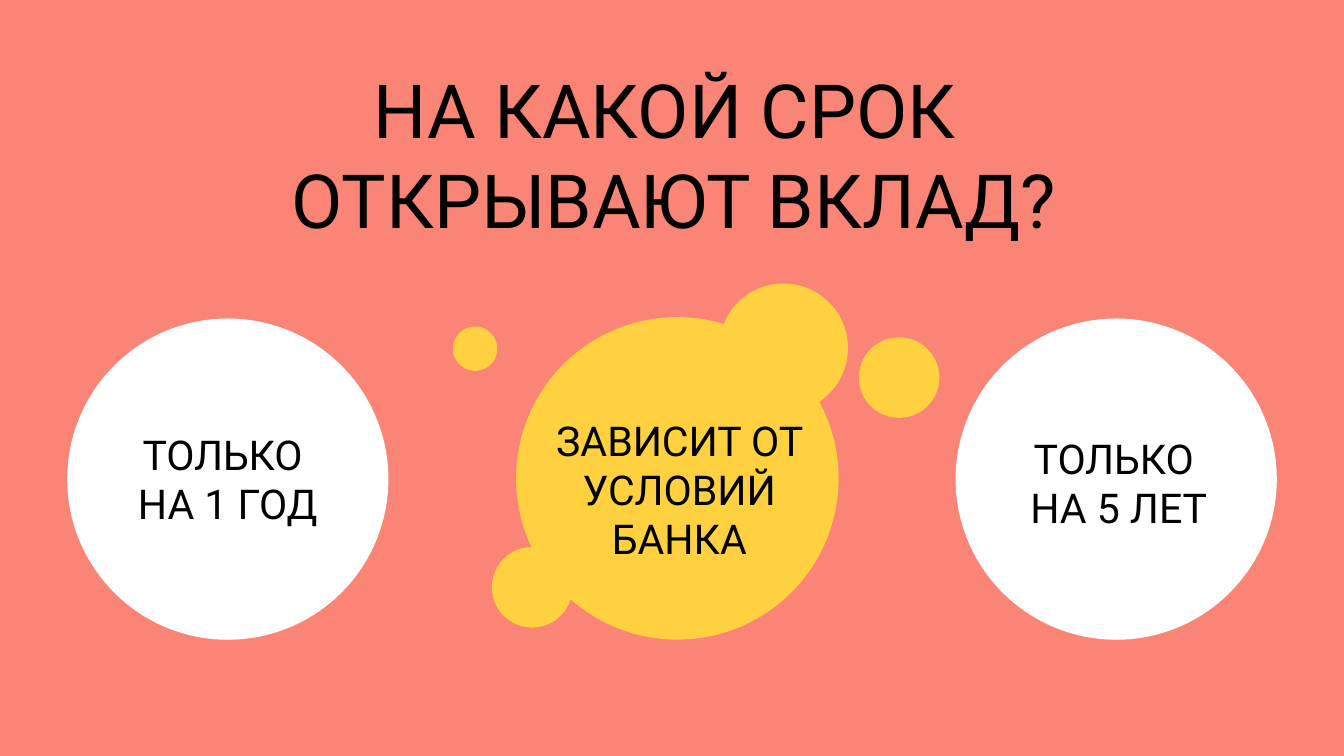
from pptx import Presentation
from pptx.dml.color import RGBColor
from pptx.enum.shapes import MSO_SHAPE as Shape
from pptx.enum.text import MSO_ANCHOR as Anchor, PP_ALIGN as Align
from pptx.util import Inches, Pt

COLORS = {"coral": "FA8475", "white": "FFFFFF", "yellow": "FFD040", "black": "000000"}
COLUMNS, ROWS = 100, 56.25


class Slide:
    font = "Roboto"

    def __init__(self, deck):
        self.unit = deck.slide_width / COLUMNS
        self.page = deck.slides.add_slide(deck.slide_layouts[6])

    def place(self, *cells):
        return [round(cell * self.unit) for cell in cells]

    def shape(self, kind, color, left, top, width, height, parent=None):
        holder = parent or self.page
        shape = holder.shapes.add_shape(kind, *self.place(left, top, width, height))
        shape.shadow.inherit = False
        shape.fill.solid()
        shape.fill.fore_color.rgb = RGBColor.from_string(COLORS[color])
        shape.line.fill.background()

    def circle(self, color, left, top, size, parent=None):
        self.shape(Shape.OVAL, color, left, top, size, size, parent)

    def bubbles(self, color, circles):
        group = self.page.shapes.add_group_shape()
        for left, top, size in circles:
            self.circle(color, left, top, size, group)

    def text(self, words, size, left, top, width, height, anchor=Anchor.MIDDLE):
        box = self.page.shapes.add_textbox(*self.place(left, top, width, height))
        frame = box.text_frame
        frame.word_wrap = True
        frame.vertical_anchor = anchor
        frame.margin_left = frame.margin_right = Inches(0.1)
        frame.margin_top = frame.margin_bottom = Inches(0.1)
        frame.text = words
        for para in frame.paragraphs:
            para.alignment = Align.CENTER
            for span in para.runs:
                span.font.name = self.font
                span.font.size = Pt(size)
                span.font.color.rgb = RGBColor.from_string(COLORS["black"])


def main():
    deck = Presentation()
    deck.slide_width = Inches(10)
    deck.slide_height = Inches(ROWS / 10)
    slide = Slide(deck)

    slide.shape(Shape.RECTANGLE, "coral", 0, 0, COLUMNS, ROWS)
    slide.text("НА КАКОЙ СРОК \vОТКРЫВАЮТ ВКЛАД?", 40, 0.3, 1.2, 99.7, 17.9, Anchor.BOTTOM)

    for left in (5, 71.1):
        slide.circle("white", left, 23.7, 23.9)
    slide.bubbles("yellow", [
        (38.4, 23.6, 24),
        (53.5, 21.1, 9.6),
        (49.5, 36, 9.6),
        (36.6, 40.7, 6),
        (63.9, 25.1, 6),
        (33.7, 24.3, 3.3),
    ])

    answers = [
        ("ТОЛЬКО \nНА 1 ГОД", 5.3, 27.3),
        ("ЗАВИСИТ ОТ УСЛОВИЙ БАНКА", 38.9, 28.1),
        ("ТОЛЬКО \nНА 5 ЛЕТ", 71.6, 27.6),
    ]
    for words, left, top in answers:
        slide.text(words, 22, left, top, 23.3, 16.6)

    deck.save("out.pptx")


if __name__ == "__main__":
    main()
